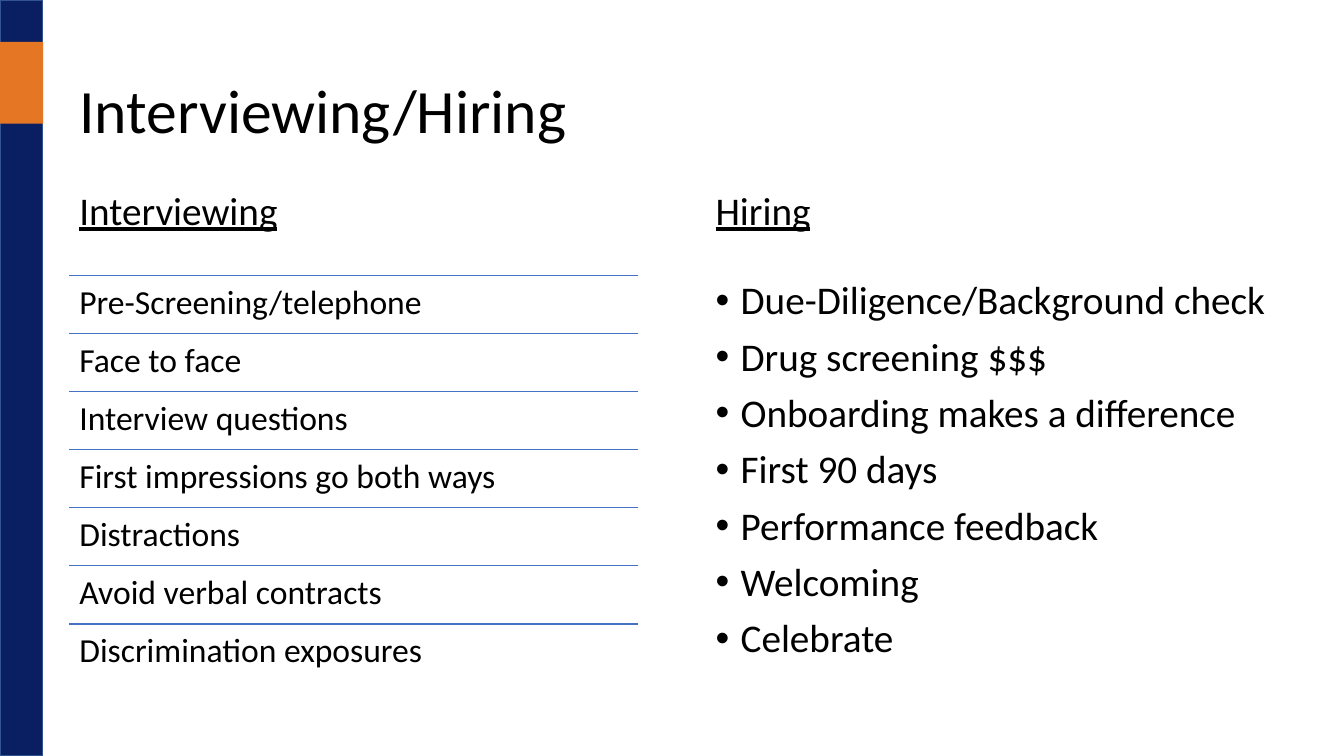
"""Build the Interviewing/Hiring slide."""
import pptx
import pptx.dml.color
import pptx.enum.shapes
import pptx.enum.text
import pptx.oxml.ns
import pptx.util
from lxml import etree

Pt = pptx.util.Pt
qn = pptx.oxml.ns.qn
COLORS = {"navy": "0A1F62", "navy_edge": "325491", "orange": "E57724",
          "rule": "4472C4", "text": "000000"}


def color(name):
    return pptx.dml.color.RGBColor.from_string(COLORS[name])


def add_text(lines, left, top, width, height, size, inset=3.6, underline=False, bullet=False):
    frame = slide.shapes.add_textbox(Pt(left), Pt(top), Pt(width), Pt(height)).text_frame
    frame.word_wrap = True
    frame.margin_top = frame.margin_bottom = Pt(inset)
    frame.margin_left = frame.margin_right = Pt(7.2)
    for index, line in enumerate(lines):
        paragraph = frame.paragraphs[0] if index == 0 else frame.add_paragraph()
        paragraph.line_spacing = 0.9
        paragraph.space_before = Pt(10 if index else 0)
        if bullet:
            properties = paragraph._p.get_or_add_pPr()
            properties.set("marL", str(Pt(18)))
            properties.set("indent", str(Pt(-18)))
            etree.SubElement(properties, qn("a:buFont")).set("typeface", "Arial")
            etree.SubElement(properties, qn("a:buChar")).set("char", "•")
        run = paragraph.add_run()
        run.text = line
        run.font.name = "Calibri"
        run.font.size = Pt(size)
        run.font.color.rgb = color("text")
        if underline:
            run.font.underline = True
    return frame


presentation = pptx.Presentation()
presentation.slide_width = Pt(960)
presentation.slide_height = Pt(540)
slide = presentation.slides.add_slide(presentation.slide_layouts[6])

for fill, edge, top, width, height in [("navy", "navy_edge", 0, 30.4, 540),
                                       ("orange", None, 30, 30.8, 58.4)]:
    band = slide.shapes.add_shape(pptx.enum.shapes.MSO_SHAPE.RECTANGLE,
                                  Pt(0), Pt(top), Pt(width), Pt(height))
    band.shadow.inherit = False
    band.fill.solid()
    band.fill.fore_color.rgb = color(fill)
    if edge:
        band.line.color.rgb = color(edge)
        band.line.width = Pt(1)
    else:
        band.line.fill.background()

title = add_text(["Interviewing/Hiring"], 49.6, 28.8, 828, 104.4, 44)
title.vertical_anchor = pptx.enum.text.MSO_ANCHOR.MIDDLE

for heading, left in [("Interviewing", 49.6), ("Hiring", 504)]:
    add_text([heading], left, 133, 406, 64.6, 28, underline=True)

interview_topics = ["Pre-Screening/telephone", "Face to face", "Interview questions",
                    "First impressions go both ways", "Distractions",
                    "Avoid verbal contracts", "Discrimination exposures"]
for row, topic in enumerate(interview_topics):
    top = 197 + row * 41.43
    rule = slide.shapes.add_connector(pptx.enum.shapes.MSO_CONNECTOR.STRAIGHT,
                                      Pt(49.6), Pt(top), Pt(455.6), Pt(top))
    rule.line.color.rgb = color("rule")
    rule.line.width = Pt(1)
    etree.SubElement(rule._element.spPr, qn("a:effectLst"))
    add_text([topic], 49.6, top, 406, 41.43, 24, inset=7.2)

hiring_topics = ["Due-Diligence/Background check", "Drug screening $$$",
                 "Onboarding makes a difference", "First 90 days",
                 "Performance feedback", "Welcoming", "Celebrate"]
add_text(hiring_topics, 504, 197, 419, 290, 28, bullet=True)

presentation.save("out.pptx")
